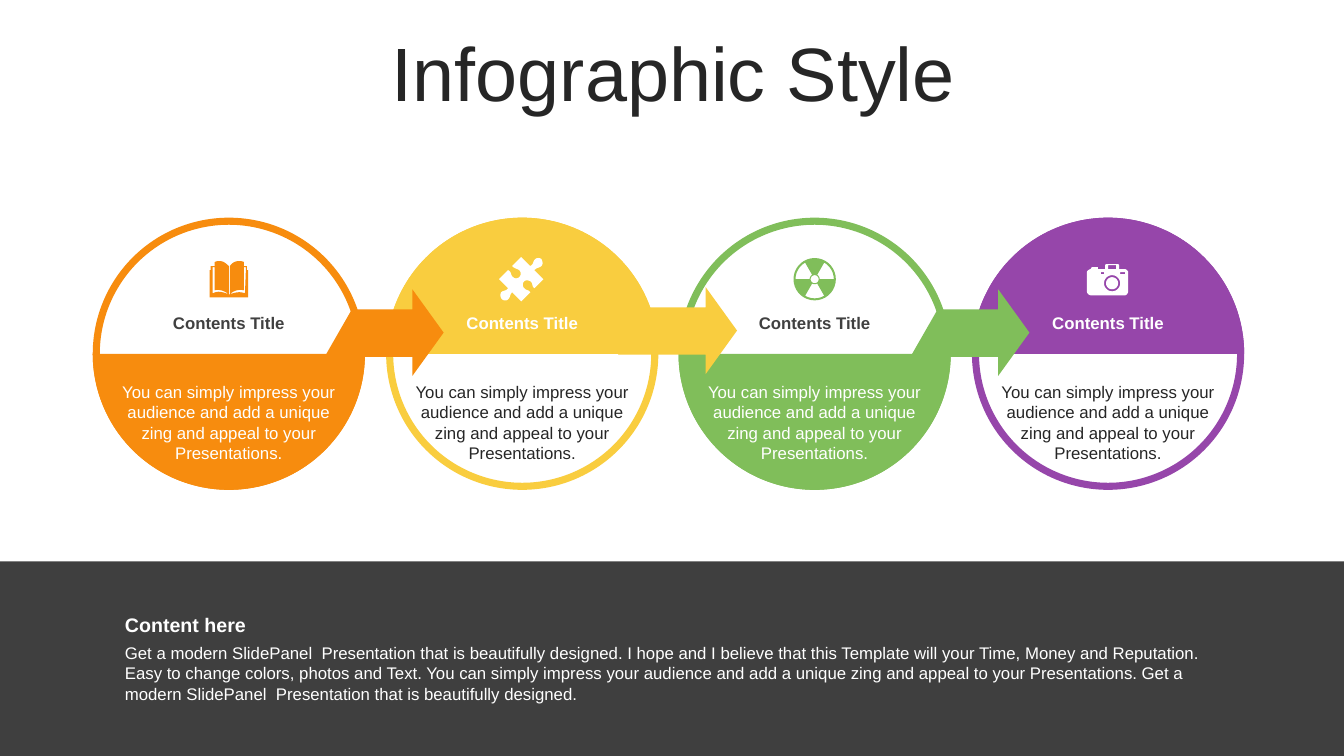
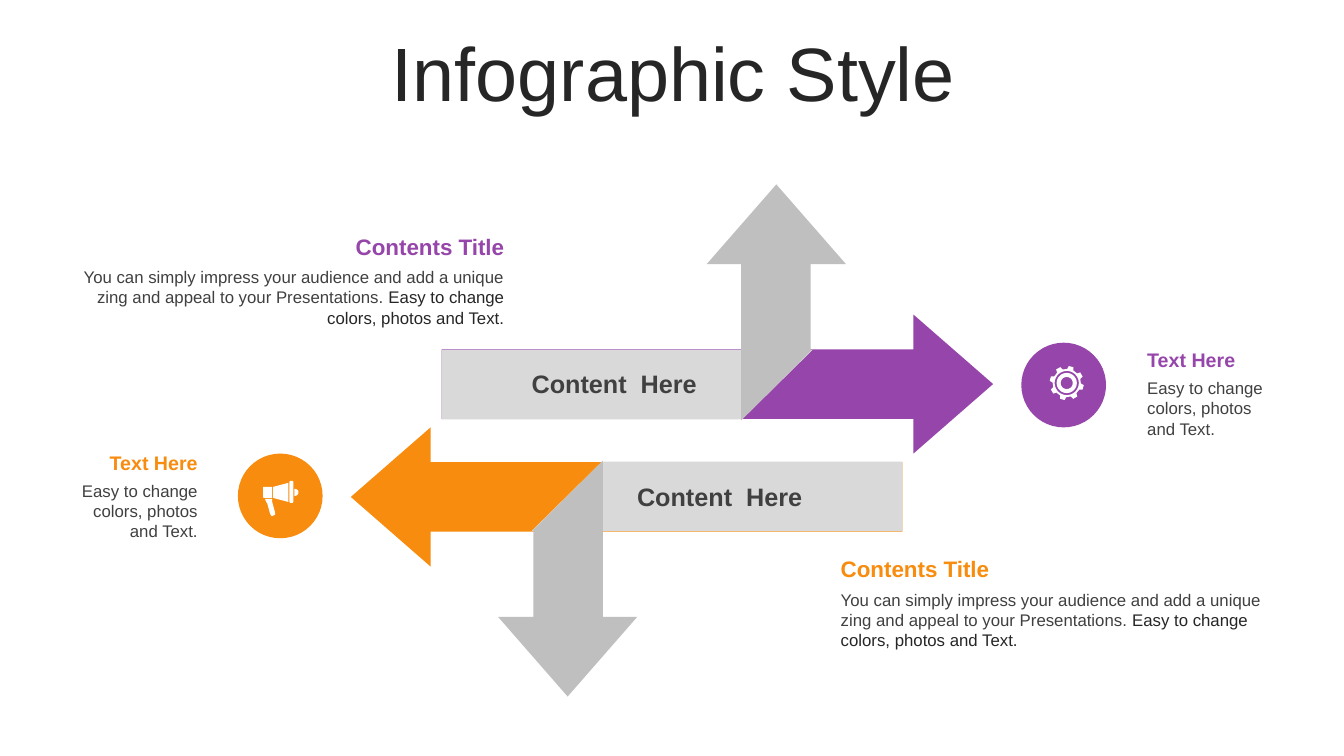
import math

import pptx
import pptx.dml.color
import pptx.enum.shapes
import pptx.enum.text
import pptx.util

PX = 9144
WIDTH, HEIGHT = 1333, 750
FONT = "Arial"
COLORS = {
    "orange": "F78C0E", "yellow": "F9CD3F", "green": "80BE5A", "purple": "9646AA",
    "white": "FFFFFF", "ink": "262626", "text": "404040", "band": "3F3F3F",
    "bar": "D9D9D9", "arrow": "BFBFBF",
}
SHAPE = pptx.enum.shapes.MSO_SHAPE
ALIGN = pptx.enum.text.PP_ALIGN
ANCHOR = pptx.enum.text.MSO_ANCHOR

IMPRESS = ("You can simply impress your audience and add a unique zing "
           "and appeal to your Presentations.")
EASY = "Easy to change colors, photos and Text."


def emu(px):
    return pptx.util.Emu(round(px * PX))


def rgb(name):
    return pptx.dml.color.RGBColor.from_string(COLORS[name])


def arc(cx, cy, radius, start=0, end=360):
    steps = max(2, abs(end - start) // 10)
    angles = [math.radians(start + (end - start) * i / steps) for i in range(steps + 1)]
    return [(cx + radius * math.cos(a), cy + radius * math.sin(a)) for a in angles]


def flatten(nodes):
    points = []
    for node in nodes:
        if len(node) == 2:
            points.append(node)
            continue
        curve = [points[-1], node[:2], node[2:4], node[4:]]
        for i in range(1, 7):
            t = i / 6
            weights = ((1 - t) ** 3, 3 * t * (1 - t) ** 2, 3 * t * t * (1 - t), t ** 3)
            points.append(tuple(sum(w * c[axis] for w, c in zip(weights, curve))
                                for axis in (0, 1)))
    return points


def radiation_icon(cx, cy):
    contours = [arc(cx, cy, 21), arc(cx, cy, 4)]
    for start in (60, 180, 300):
        contours.append(arc(cx, cy, 19, start, start + 60) + arc(cx, cy, 5, start + 60, start))
    return contours


def gear_icon(cx, cy):
    teeth = []
    for middle in range(15, 375, 45):
        for turn, radius in ((-13, 14), (-8, 17), (8, 17), (13, 14)):
            a = math.radians(middle + turn)
            teeth.append((cx + radius * math.cos(a), cy + radius * math.sin(a)))
    return [teeth] + [arc(cx, cy, radius) for radius in (12, 10, 6)]


def box(left, top, right, bottom):
    return [(left, top), (right, top), (right, bottom), (left, bottom)]


BOOK = [[
    (227, 292), (228, 292), (234, 290, 237, 289, 243, 291), (244, 265), (242, 265),
    (242, 288), (237, 287, 232, 288, 228, 292), (228, 264),
    (230, 261, 233, 259, 237, 259), (238, 259, 240, 259, 242, 260), (242, 264),
    (245, 264), (245, 268), (246, 268), (246, 295), (208, 295), (208, 268),
    (209, 268), (209, 264), (213, 264), (213, 260), (215, 259, 216, 259, 218, 259),
    (221, 259, 224, 261, 227, 264), (227, 292), (222, 288, 217, 287, 213, 288),
    (213, 265), (211, 265), (211, 291), (217, 288, 221, 290, 227, 292),
]]
PUZZLE = [[
    (537, 257), (538, 259, 539, 262, 537, 264), (535, 266, 533, 265, 530, 268),
    (539, 277), (530, 286), (527, 284, 529, 281, 526, 279),
    (524, 278, 521, 278, 520, 279), (518, 281, 518, 284, 520, 286),
    (523, 289, 524, 287, 526, 290), (517, 299), (508, 290),
    (505, 293, 507, 294, 504, 297), (502, 299, 499, 298, 498, 297),
    (496, 295, 496, 292, 497, 290), (499, 288, 502, 289, 504, 286), (495, 277),
    (504, 268), (508, 270, 506, 273, 509, 275), (511, 277, 514, 276, 515, 275),
    (517, 273, 517, 270, 515, 268), (512, 266, 511, 267, 508, 264), (517, 255),
    (526, 264), (530, 261, 528, 261, 530, 258), (532, 255, 536, 256, 537, 257),
]]
CAMERA = [
    [(1097, 262), (1109, 262), (1110, 263), (1110, 267), (1116, 267),
     (1117, 267, 1119, 269, 1119, 270), (1119, 289), (1119, 291, 1117, 293, 1116, 293),
     (1082, 293), (1080, 293, 1078, 291, 1078, 289), (1078, 270),
     (1078, 269, 1080, 267, 1082, 267), (1082, 266), (1083, 265), (1089, 265),
     (1089, 267), (1096, 267), (1096, 263)],
    arc(1103, 281, 8), arc(1103, 281, 6),
    box(1092, 270, 1095, 272), box(1111, 270, 1116, 272), box(1099, 263, 1107, 267),
]
MEGAPHONE = [
    [(263, 495), (270, 495), (270, 498), (273, 509), (273, 510, 273, 511, 272, 511),
     (270, 512), (269, 512, 269, 511, 268, 510), (265, 499), (264, 498)],
    [(292, 485), (294, 485, 296, 486, 296, 488), (296, 491, 294, 492, 292, 492)],
    [(262, 483), (270, 483), (270, 494), (262, 494), (261, 494, 261, 493, 261, 492),
     (261, 484), (261, 483, 261, 483, 262, 483)],
    [(286, 479), (286, 498), (271, 494), (271, 483)],
    [(288, 477), (290, 477), (291, 478), (291, 498), (290, 499), (288, 499),
     (287, 498), (287, 478)],
]


class Deck:
    def __init__(self):
        self.prs = pptx.Presentation()
        self.prs.slide_width, self.prs.slide_height = emu(WIDTH), emu(HEIGHT)

    def slide(self, title):
        self.s = self.prs.slides.add_slide(self.prs.slide_layouts[6])
        p = self.text(35, 37, 1266, 79, title, 54, "ink", align=ALIGN.CENTER,
                      anchor=ANCHOR.MIDDLE)
        p.line_spacing = 0.9

    def paint(self, sp, color):
        sp.shadow.inherit = False
        sp.fill.solid()
        sp.fill.fore_color.rgb = rgb(color)
        sp.line.fill.background()

    def shape(self, kind, x, y, w, h, color, adjustments=()):
        sp = self.s.shapes.add_shape(kind, emu(x), emu(y), emu(w), emu(h))
        for i, value in enumerate(adjustments):
            sp.adjustments[i] = value
        self.paint(sp, color)

    def outline(self, contours, color):
        builder = None
        for nodes in contours:
            points = [(emu(x), emu(y)) for x, y in flatten(nodes)]
            if builder is None:
                builder = self.s.shapes.build_freeform(*points[0], scale=1.0)
            else:
                builder.move_to(*points[0])
            builder.add_line_segments(points[1:], close=True)
        self.paint(builder.convert_to_shape(), color)

    def text(self, x, y, w, h, text, size, color, bold=False, align=ALIGN.LEFT,
             anchor=ANCHOR.TOP, more=None):
        tf = self.s.shapes.add_textbox(emu(x), emu(y), emu(w), emu(h)).text_frame
        tf.word_wrap = True
        tf.vertical_anchor = anchor
        tf.text = text
        p = tf.paragraphs[0]
        p.alignment = align
        if more:
            p.add_run().text = " " + more
        for r, run_color in zip(p.runs, (color, "ink")):
            r.font.name = FONT
            r.font.size = pptx.util.Pt(size)
            r.font.bold = bold
            r.font.color.rgb = rgb(run_color)
        return p

    def caption(self, x, y, w, title, size, title_color, body, body_color="text",
                align=ALIGN.LEFT, more=None):
        self.text(x, y, w, 2 * size + 6, title, size, title_color, True, align)
        self.text(x, y + 2 * size + 2, w, 71, body, 12, body_color, align=align, more=more)

    def step(self, index, color, icon, top_filled, has_arrow):
        x, y, size = 92 + round(index * 872 / 3), 216, 270
        self.shape(SHAPE.DONUT, x, y, size, size, color, [0.026])
        self.shape(SHAPE.CHORD, x, y, size, size, color, [108, 0] if top_filled else [0, 108])
        if has_arrow:
            left, top = x + 230, 285 if top_filled else 287
            points = ((87, 0), (118, 43), (87, 86), (87, 67), (0, 67), (27, 20), (87, 20))
            self.outline([[(left + dx, top + dy) for dx, dy in points]], color)
        self.outline(icon, "white" if top_filled else color)
        self.text(x + 64, 305, 142, 30, "Contents Title", 12,
                  "white" if top_filled else "text", True, ALIGN.CENTER)
        self.text(x + 13, 374, 244, 91, IMPRESS, 12,
                  "ink" if top_filled else "white", align=ALIGN.CENTER)

    def folded_arrow(self, color, icon, turned):
        def place(points):
            return [(WIDTH - px, 874 - py) if turned else (px, py) for px, py in points]

        def corner(x, y, w, h):
            return (WIDTH - x - w, 874 - y - h, w, h) if turned else (x, y, w, h)

        kind = SHAPE.RIGHT_ARROW if turned else SHAPE.LEFT_ARROW
        self.shape(kind, *corner(348, 424, 547, 138), color, [0.5, 0.573])
        self.outline([place([(597, 458), (895, 458), (895, 527), (527, 527)])], "bar")
        self.outline([place([(598, 457), (598, 612), (632, 612), (563, 691),
                             (494, 612), (529, 612), (529, 526)])], "arrow")
        self.shape(SHAPE.OVAL, *corner(236, 450, 84, 84), color)
        self.outline(icon, "white")


def main():
    deck = Deck()

    deck.slide("Infographic Style")
    steps = [("orange", BOOK), ("yellow", PUZZLE),
             ("green", radiation_icon(808, 277)), ("purple", CAMERA)]
    for i, (color, icon) in reversed(list(enumerate(steps))):
        deck.step(i, color, icon, top_filled=i % 2 == 1, has_arrow=i < len(steps) - 1)
    deck.shape(SHAPE.RECTANGLE, 0, 557, WIDTH, 193, "band")
    deck.caption(
        114, 603, 1118, "Content here", 14, "white",
        "Get a modern SlidePanel  Presentation that is beautifully designed. I hope and I "
        "believe that this Template will your Time, Money and Reputation. Easy to change "
        "colors, photos and Text. You can simply impress your audience and add a unique zing "
        "and appeal to your Presentations. Get a modern SlidePanel  Presentation that is "
        "beautifully designed.", "white")

    deck.slide("Infographic Style")
    deck.folded_arrow("orange", MEGAPHONE, turned=False)
    deck.folded_arrow("purple", gear_icon(1058, 380), turned=True)
    for x, y, align in ((622, 473, ALIGN.LEFT), (453, 360, ALIGN.RIGHT)):
        deck.text(x, y, 248, 40, "Content  Here", 18, "text", True, align, ANCHOR.MIDDLE)
    for x, y, color, align in ((1128, 340, "purple", ALIGN.LEFT),
                               (62, 442, "orange", ALIGN.RIGHT)):
        deck.caption(x, y, 144, "Text Here", 14, color, EASY, align=align)
    for x, y, color, align in ((824, 546, "orange", ALIGN.LEFT),
                               (62, 226, "purple", ALIGN.RIGHT)):
        deck.caption(x, y, 448, "Contents Title", 16, color, IMPRESS, align=align, more=EASY)

    deck.prs.save("out.pptx")


if __name__ == "__main__":
    main()
